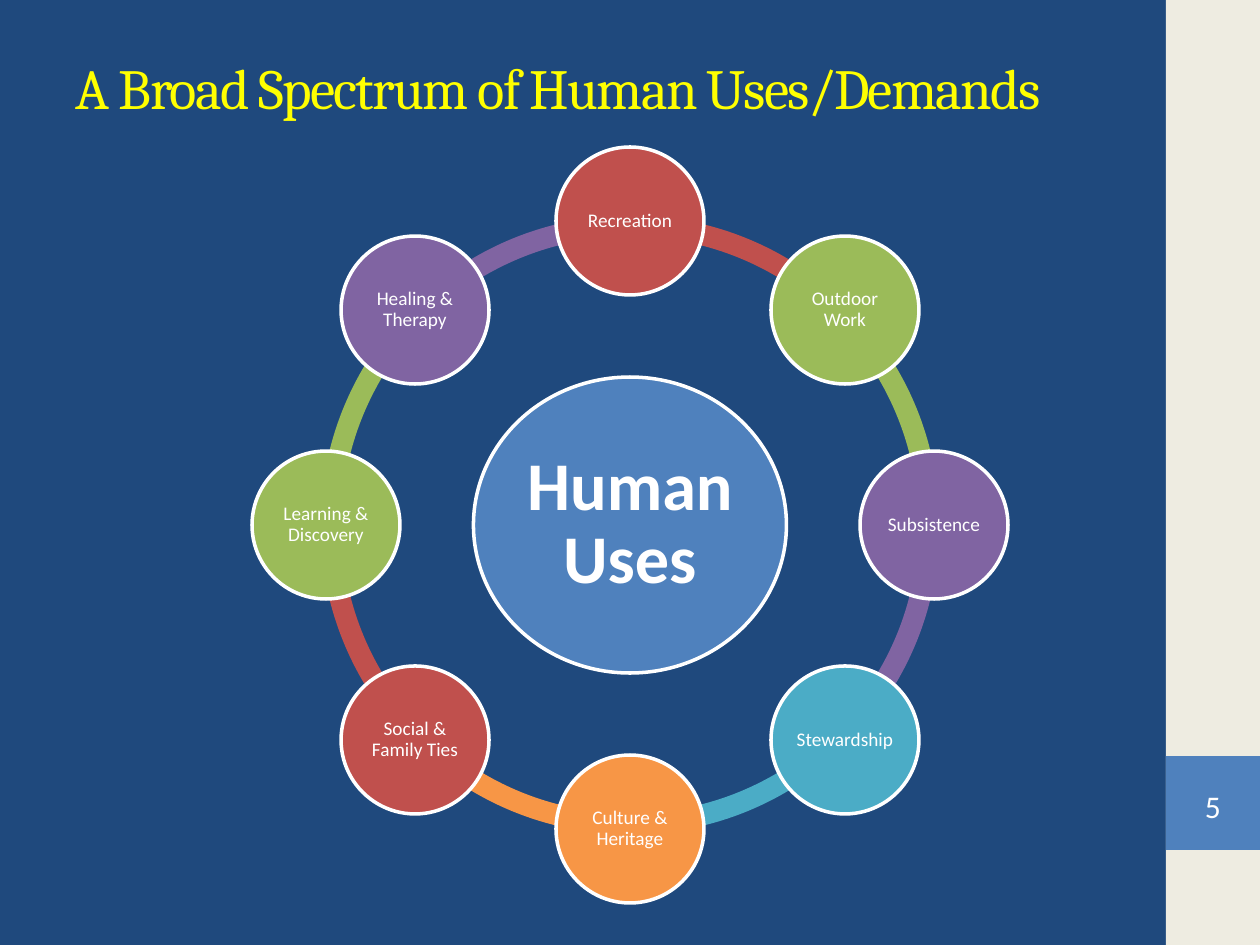
import math
from dataclasses import dataclass

from pptx import Presentation
from pptx.dml.color import RGBColor
from pptx.enum.shapes import MSO_SHAPE
from pptx.enum.text import MSO_ANCHOR, MSO_AUTO_SIZE, PP_ALIGN
from pptx.util import Pt

RECTANGLE, OVAL = MSO_SHAPE.RECTANGLE, MSO_SHAPE.OVAL
BLOCK_ARC, BRACKETS = MSO_SHAPE.BLOCK_ARC, MSO_SHAPE.DOUBLE_BRACKET
LEFT, CENTER = PP_ALIGN.LEFT, PP_ALIGN.CENTER
MIDDLE = MSO_ANCHOR.MIDDLE
NO_FIT = MSO_AUTO_SIZE.NONE

EMU_PER_PX = 914400 / 126
ARC_UNITS_PER_DEGREE = 0.6  # 60000 units a degree, over the 100000 of an adjustment


@dataclass(frozen=True)
class Theme:
    background: str = "1F497D"
    panel: str = "EEECE1"
    blue: str = "4F81BD"
    red: str = "C0504D"
    green: str = "9BBB59"
    purple: str = "8064A2"
    teal: str = "4BACC6"
    orange: str = "F79646"
    white: str = "FFFFFF"
    yellow: str = "FFFF00"
    heading_font: str = "Cambria"
    body_font: str = "Calibri"
    title_size: float = 32.4
    hub_size: float = 39
    number_size: float = 18
    node_size: float = 11
    outline: float = 2


THEME = Theme()

# Clockwise from the top; each arc takes the colour of the node it leaves
USES = [
    ("Recreation", THEME.red),
    ("Outdoor Work", THEME.green),
    ("Subsistence", THEME.purple),
    ("Stewardship", THEME.teal),
    ("Culture & Heritage", THEME.orange),
    ("Social & Family Ties", THEME.red),
    ("Learning & Discovery", THEME.green),
    ("Healing & Therapy", THEME.purple),
]


def px(length):
    return round(length * EMU_PER_PX)


def rgb(color):
    return RGBColor.from_string(color)


def add_shape(page, kind, box, fill=None, outline=None):
    shape = page.shapes.add_shape(kind, *map(px, box))
    shape.shadow.inherit = False
    if fill:
        shape.fill.solid()
        shape.fill.fore_color.rgb = rgb(fill)
    else:
        shape.fill.background()
    if outline:
        shape.line.color.rgb = rgb(outline)
        shape.line.width = Pt(THEME.outline)
    else:
        shape.line.fill.background()
    return shape


def write(shape, text, size, color=THEME.white, font=THEME.body_font,
          align=CENTER, bold=False, inset=0, spacing=None):
    frame = shape.text_frame
    frame.text = text
    frame.word_wrap = True
    frame.auto_size = NO_FIT
    frame.vertical_anchor = MIDDLE
    frame.margin_left = frame.margin_right = px(inset)
    frame.margin_top = frame.margin_bottom = px(inset)
    para = frame.paragraphs[0]
    para.alignment = align
    para.line_spacing = spacing
    span = para.runs[0]
    span.font.name = font
    span.font.size = Pt(size)
    span.font.bold = bold
    span.font.color.rgb = rgb(color)
    return span


def add_title(page, box, text):
    title = page.shapes.title
    title.left, title.top, title.width, title.height = map(px, box)
    span = write(title, text, THEME.title_size, THEME.yellow,
                 THEME.heading_font, LEFT, inset=13)
    span.font._element.set("spc", "-100")


def add_side_panel(page, box, number):
    left, top, width, height = box
    add_shape(page, RECTANGLE, box, THEME.panel)
    # Square page-number tab
    tab_top = top + height * 4 // 5
    add_shape(page, RECTANGLE, (left, tab_top, width, width), THEME.blue)
    label = add_shape(page, BRACKETS, (left + 10, tab_top + 23, width - 20, 54))
    write(label, number, THEME.number_size)


def add_radial_cycle(page, box, hub_text, uses):
    left, top, size, _ = box
    center_x, center_y = left + size / 2, top + size / 2
    node, ring, band = 148, 619, 21
    radius = (size - node) / 2
    step = 360 / len(uses)

    def centered(x, y, width, height):
        return x - width / 2, y - height / 2, width, height

    # Ring of arcs
    for index, (_, color) in enumerate(uses):
        arc = add_shape(page, BLOCK_ARC,
                        centered(center_x, center_y, ring, ring), color)
        start = 270 + index * step
        arc.adjustments[0] = start % 360 * ARC_UNITS_PER_DEGREE
        arc.adjustments[1] = (start + step) % 360 * ARC_UNITS_PER_DEGREE
        arc.adjustments[2] = band / ring

    # Hub
    hub = add_shape(page, OVAL, centered(center_x, center_y, 313, 296),
                    THEME.blue, THEME.white)
    write(hub, hub_text, THEME.hub_size, bold=True, inset=6, spacing=0.9)

    # Nodes around the ring
    for index, (name, color) in enumerate(uses):
        angle = math.radians(270 + index * step)
        x = center_x + radius * math.cos(angle)
        y = center_y + radius * math.sin(angle)
        circle = add_shape(page, OVAL, centered(x, y, node, node),
                           color, THEME.white)
        write(circle, name, THEME.node_size, inset=2, spacing=0.9)


def main():
    deck = Presentation()
    deck.slide_width, deck.slide_height = px(1260), px(945)
    page = deck.slides.add_slide(deck.slide_layouts[5])
    page.background.fill.solid()
    page.background.fill.fore_color.rgb = rgb(THEME.background)

    add_side_panel(page, (1166, 0, 94, 945), "5")
    add_title(page, (63, 38, 1071, 98), "A Broad Spectrum of Human Uses/Demands")
    add_radial_cycle(page, (252, 147, 756, 756), "Human Uses", USES)
    deck.save("out.pptx")


if __name__ == "__main__":
    main()
